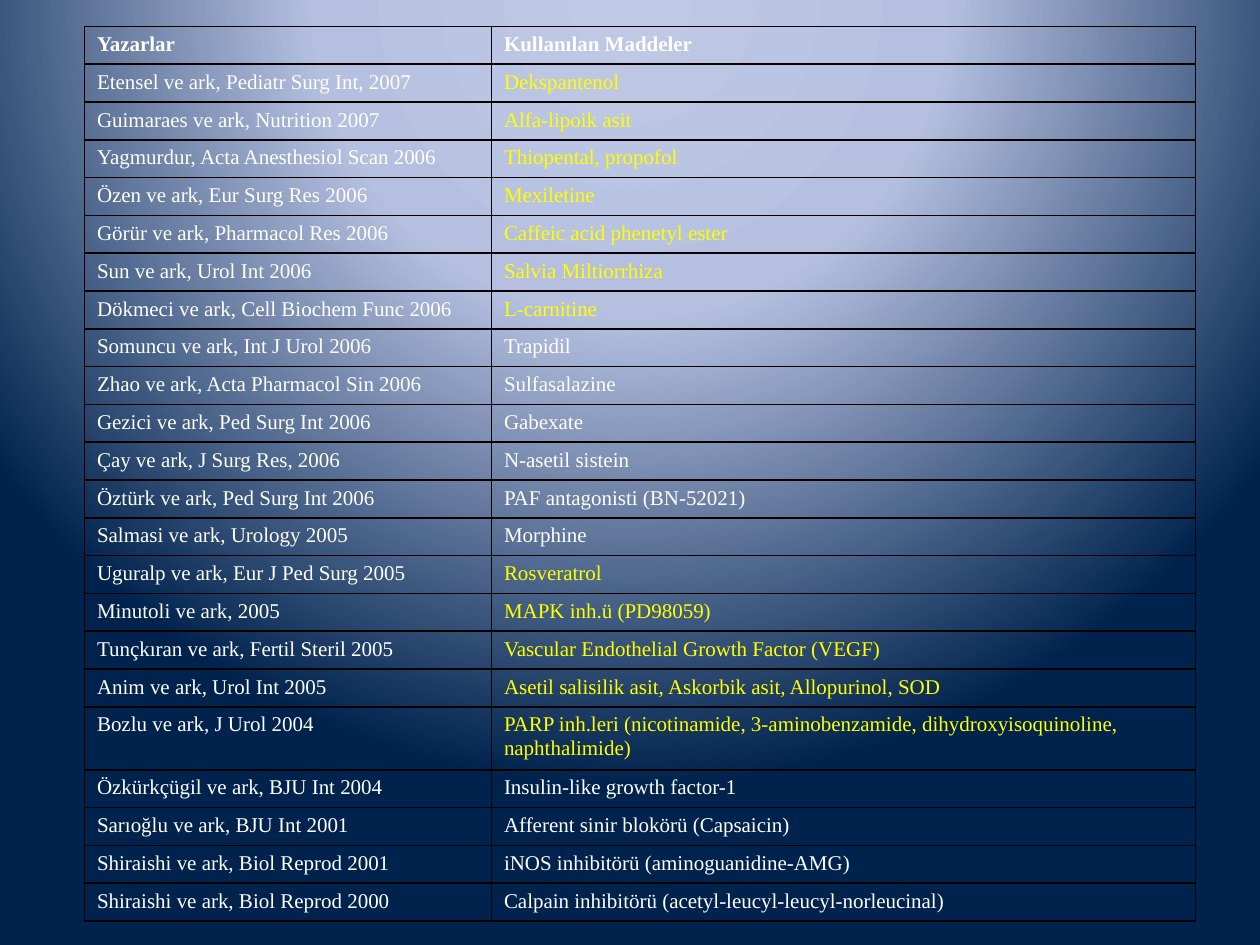
from pptx import Presentation
from pptx.dml.color import RGBColor
from pptx.oxml import parse_xml
from pptx.oxml.ns import nsdecls
from pptx.util import Inches, Pt

WHITE = RGBColor(0xFF, 0xFF, 0xFF)
YELLOW = RGBColor(0xFF, 0xFF, 0x00)
BORDER = RGBColor(0x00, 0x00, 0x00)
BACKDROP = [
    (0, RGBColor(0xBF, 0xC9, 0xE5)),
    (40, RGBColor(0xB5, 0xC0, 0xE0)),
    (100, RGBColor(0x00, 0x23, 0x4D)),
]

HEADER = ("Yazarlar", "Kullanılan Maddeler")
# Authors, substance, colour of the substance
STUDIES = [
    ("Etensel ve ark, Pediatr Surg Int, 2007", "Dekspantenol", YELLOW),
    ("Guimaraes ve ark, Nutrition 2007", "Alfa-lipoik asit", YELLOW),
    ("Yagmurdur, Acta Anesthesiol Scan 2006", "Thiopental, propofol", YELLOW),
    ("Özen ve ark, Eur Surg Res 2006", "Mexiletine", YELLOW),
    ("Görür ve ark, Pharmacol Res 2006", "Caffeic acid phenetyl ester", YELLOW),
    ("Sun ve ark, Urol Int 2006", "Salvia Miltiorrhiza", YELLOW),
    ("Dökmeci ve ark, Cell Biochem Func 2006", "L-carnitine", YELLOW),
    ("Somuncu ve ark, Int J Urol 2006", "Trapidil", WHITE),
    ("Zhao ve ark, Acta Pharmacol Sin 2006", "Sulfasalazine", WHITE),
    ("Gezici ve ark, Ped Surg Int 2006", "Gabexate", WHITE),
    ("Çay ve ark, J Surg Res, 2006", "N-asetil sistein", WHITE),
    ("Öztürk ve ark, Ped Surg Int 2006", "PAF antagonisti (BN-52021)", WHITE),
    ("Salmasi ve ark, Urology 2005", "Morphine", WHITE),
    ("Uguralp ve ark, Eur J Ped Surg 2005", "Rosveratrol", YELLOW),
    ("Minutoli ve ark, 2005", "MAPK inh.ü (PD98059)", YELLOW),
    ("Tunçkıran ve ark, Fertil Steril 2005",
     "Vascular Endothelial Growth Factor (VEGF)", YELLOW),
    ("Anim ve ark, Urol Int 2005",
     "Asetil salisilik asit, Askorbik asit, Allopurinol, SOD", YELLOW),
    ("Bozlu ve ark, J Urol 2004",
     "PARP inh.leri (nicotinamide, 3-aminobenzamide, "
     "dihydroxyisoquinoline, naphthalimide)", YELLOW),
    ("Özkürkçügil ve ark, BJU Int 2004", "Insulin-like growth factor-1", WHITE),
    ("Sarıoğlu ve ark, BJU Int 2001", "Afferent sinir blokörü (Capsaicin)", WHITE),
    ("Shiraishi ve ark, Biol Reprod 2001",
     "iNOS inhibitörü (aminoguanidine-AMG)", WHITE),
    ("Shiraishi ve ark, Biol Reprod 2000",
     "Calpain inhibitörü (acetyl-leucyl-leucyl-norleucinal)", WHITE),
]

LEFT, TOP = 0.67, 0.21
COLUMN_WIDTHS = (3.23, 5.59)
ROW_HEIGHT, TALL_ROW_HEIGHT = 0.3, 0.5
LINE_LENGTH = 70  # characters that fit on one line of the second column


def set_backdrop(page):
    """Fill the page with a circular gradient centred above its top edge."""
    stops = "".join(
        f'<a:gs pos="{position * 1000}"><a:srgbClr val="{colour}"/></a:gs>'
        for position, colour in BACKDROP)
    page.element.cSld.insert(0, parse_xml(
        f'<p:bg {nsdecls("p", "a")}><p:bgPr><a:gradFill rotWithShape="1">'
        f'<a:gsLst>{stops}</a:gsLst><a:path path="circle">'
        '<a:fillToRect l="50000" t="-80000" r="50000" b="180000"/>'
        '</a:path></a:gradFill><a:effectLst/></p:bgPr></p:bg>'))


def set_borders(cell):
    properties = cell._tc.get_or_add_tcPr()
    for index, side in enumerate("LRTB"):
        properties.insert(index, parse_xml(
            f'<a:ln{side} {nsdecls("a")} w="{Pt(1)}"><a:solidFill>'
            f'<a:srgbClr val="{BORDER}"/></a:solidFill></a:ln{side}>'))


def write(cell, text, colour=WHITE, bold=False, size=12, font="Times New Roman"):
    span = cell.text_frame.paragraphs[0].add_run()
    span.text = text
    span.font.name = font
    span.font.size = Pt(size)
    span.font.bold = bold
    span.font.color.rgb = colour


def main():
    deck = Presentation()
    deck.slide_width, deck.slide_height = Inches(10), Inches(7.5)
    page = deck.slides.add_slide(deck.slide_layouts[6])
    set_backdrop(page)

    heights = [ROW_HEIGHT] + [
        TALL_ROW_HEIGHT if len(substance) > LINE_LENGTH else ROW_HEIGHT
        for _, substance, _ in STUDIES]
    table = page.shapes.add_table(
        len(heights), len(COLUMN_WIDTHS), Inches(LEFT), Inches(TOP),
        Inches(sum(COLUMN_WIDTHS)), Inches(sum(heights))).table
    table.first_row = table.horz_banding = False
    for column, width in zip(table.columns, COLUMN_WIDTHS):
        column.width = Inches(width)
    for row, height in zip(table.rows, heights):
        row.height = Inches(height)

    for column, title in enumerate(HEADER):
        write(table.cell(0, column), title, bold=True)
    for row, (authors, substance, colour) in enumerate(STUDIES, start=1):
        write(table.cell(row, 0), authors)
        write(table.cell(row, 1), substance, colour=colour)
    for cell in table.iter_cells():
        cell.fill.background()
        set_borders(cell)

    deck.save("out.pptx")


if __name__ == "__main__":
    main()
